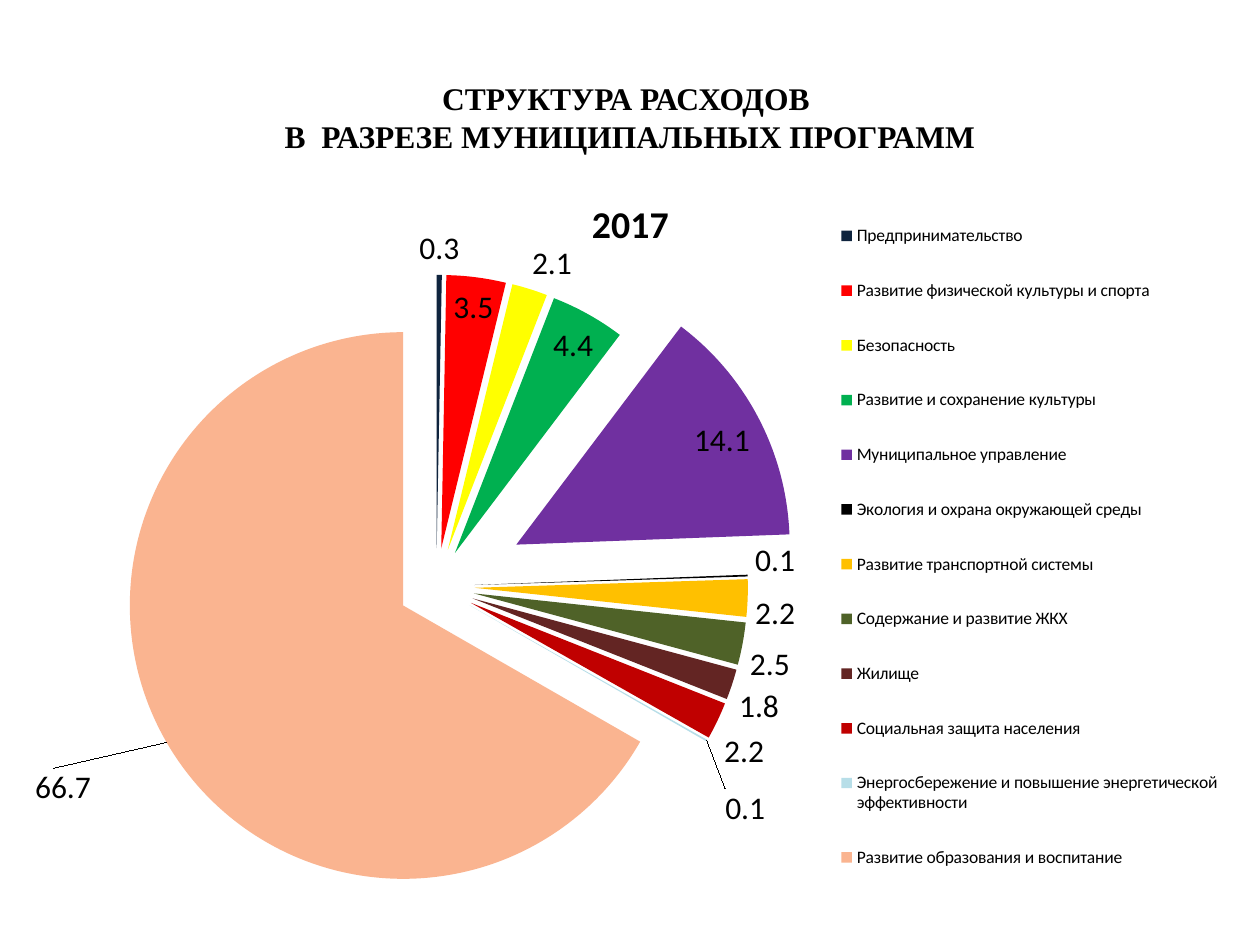
from lxml import etree
from pptx import Presentation
from pptx.chart.data import CategoryChartData
from pptx.dml.color import RGBColor
from pptx.enum.chart import XL_CHART_TYPE, XL_LABEL_POSITION, XL_LEGEND_POSITION
from pptx.enum.text import MSO_ANCHOR, PP_ALIGN
from pptx.oxml.ns import qn
from pptx.util import Pt

PIE = XL_CHART_TYPE.PIE
BEST_FIT = XL_LABEL_POSITION.BEST_FIT
LEGEND_RIGHT = XL_LEGEND_POSITION.RIGHT
MIDDLE = MSO_ANCHOR.MIDDLE
CENTER = PP_ALIGN.CENTER

BLACK = RGBColor(0, 0, 0)
PROGRAMS = [
    ("Предпринимательство", 0.3, RGBColor(0x0F, 0x24, 0x3E)),
    ("Развитие физической культуры и спорта", 3.5, RGBColor(0xFF, 0x00, 0x00)),
    ("Безопасность", 2.1, RGBColor(0xFF, 0xFF, 0x00)),
    ("Развитие и сохранение культуры", 4.4, RGBColor(0x00, 0xB0, 0x50)),
    ("Муниципальное управление", 14.1, RGBColor(0x70, 0x30, 0xA0)),
    ("Экология и охрана окружающей среды", 0.1, BLACK),
    ("Развитие транспортной системы", 2.2, RGBColor(0xFF, 0xC0, 0x00)),
    ("Содержание и развитие ЖКХ", 2.5, RGBColor(0x4F, 0x62, 0x28)),
    ("Жилище", 1.8, RGBColor(0x63, 0x25, 0x23)),
    ("Социальная защита населения", 2.2, RGBColor(0xC0, 0x00, 0x00)),
    ("Энергосбережение и повышение энергетической эффективности", 0.1,
     RGBColor(0xB7, 0xDE, 0xE8)),
    ("Развитие образования и воспитание", 66.7, RGBColor(0xFA, 0xB4, 0x90)),
]
EXPLOSION = 14
POINT_EXPLOSIONS = {4: 33}
LABEL_OFFSETS = {10: (0.01, 0.06), 11: (-0.09, 0.03)}


def set_format(target, values):
    for name, value in values.items():
        setattr(target, name, value)


def set_font(font, color=BLACK, **values):
    set_format(font, values)
    font.color.rgb = color


def add_element(parent, tag, value=None):
    element = etree.SubElement(parent, qn(tag))
    if value is not None:
        element.set("val", str(value))
    return element


def make_layout(**values):
    layout = etree.Element(qn("c:layout"))
    manual = add_element(layout, "c:manualLayout")
    for name, value in values.items():
        add_element(manual, f"c:{name}", value)
    return layout


def set_plot_layout(plot_area, layout):
    for old_layout in plot_area.findall(qn("c:layout")):
        plot_area.remove(old_layout)
    plot_area.insert(0, layout)


def set_legend_layout(legend, layout):
    for old_layout in legend.findall(qn("c:layout")):
        legend.remove(old_layout)
    legend.find(qn("c:legendPos")).addnext(layout)


def make_explosion(value):
    explosion = etree.Element(qn("c:explosion"))
    explosion.set("val", str(value))
    return explosion


def add_label_offset(labels, index, offset):
    label = etree.Element(qn("c:dLbl"))
    add_element(label, "c:idx", index)
    label.append(make_layout(x=offset[0], y=offset[1]))
    add_element(label, "c:dLblPos", "bestFit")
    for name in ("LegendKey", "Val", "CatName", "SerName", "Percent", "BubbleSize"):
        add_element(label, f"c:show{name}", int(name == "Val"))
    labels.insert(list(LABEL_OFFSETS).index(index), label)


def add_title(slide, left, top, width, height):
    frame = slide.shapes.add_textbox(left, top, width, height).text_frame
    set_format(frame, {"word_wrap": True, "vertical_anchor": MIDDLE})
    paragraph = frame.paragraphs[0]
    paragraph.text = "СТРУКТУРА РАСХОДОВ \vВ  РАЗРЕЗЕ МУНИЦИПАЛЬНЫХ ПРОГРАММ"
    paragraph.alignment = CENTER
    for run in paragraph.runs:
        set_font(run.font, name="Times New Roman", size=Pt(18), bold=True)


def style_series(series):
    for index, (_, _, color) in enumerate(PROGRAMS):
        fill = series.points[index].format.fill
        fill.solid()
        fill.fore_color.rgb = color
    element = series._element
    points = element.findall(qn("c:dPt"))
    points[0].addprevious(make_explosion(EXPLOSION))
    for index, point in enumerate(points):
        explosion = make_explosion(POINT_EXPLOSIONS.get(index, EXPLOSION))
        point.find(qn("c:spPr")).addprevious(explosion)


def style_labels(series):
    labels = series.data_labels
    set_format(labels, {"show_value": True, "position": BEST_FIT,
                        "number_format": "#,##0.0", "number_format_is_linked": False})
    set_font(labels.font, name="Calibri", size=Pt(18))
    element = labels._element
    for index, offset in LABEL_OFFSETS.items():
        add_label_offset(element, index, offset)
    for old_lines in element.findall(qn("c:showLeaderLines")):
        element.remove(old_lines)
    add_element(element, "c:showLeaderLines", 1)


def add_spending_chart(slide, left, top, width, height):
    data = CategoryChartData(number_format="0.0")
    data.categories = [name for name, _, _ in PROGRAMS]
    data.add_series("2017", [value for _, value, _ in PROGRAMS])
    chart = slide.shapes.add_chart(PIE, left, top, width, height, data).chart
    set_font(chart.font, name="Calibri", size=Pt(18))

    chart.has_title = True
    title = chart.chart_title.text_frame
    title.text = "2017"
    set_font(title.paragraphs[0].runs[0].font, name="Calibri", size=Pt(21.6), bold=True)

    chart.has_legend = True
    set_format(chart.legend, {"position": LEGEND_RIGHT, "include_in_layout": False})
    set_font(chart.legend.font, name="Calibri", size=Pt(10))
    set_legend_layout(chart.legend._element, make_layout(
        xMode="edge", yMode="edge", x=0.67, y=0.03, w=0.33, h=0.96))

    plot = chart.plots[0]
    plot.vary_by_categories = True
    set_plot_layout(chart._chartSpace.chart.plotArea, make_layout(
        layoutTarget="inner", xMode="edge", yMode="edge",
        x=0, y=0.143, w=0.674, h=0.841))
    style_series(plot.series[0])
    style_labels(plot.series[0])


def main():
    presentation = Presentation()
    set_format(presentation, {"slide_width": Pt(720), "slide_height": Pt(540)})
    slide = presentation.slides.add_slide(presentation.slide_layouts[6])
    add_title(slide, Pt(36), Pt(21.6), Pt(648), Pt(90))
    add_spending_chart(slide, Pt(20), Pt(96.5), Pt(680.5), Pt(423.5))
    presentation.save("out.pptx")


if __name__ == "__main__":
    main()
